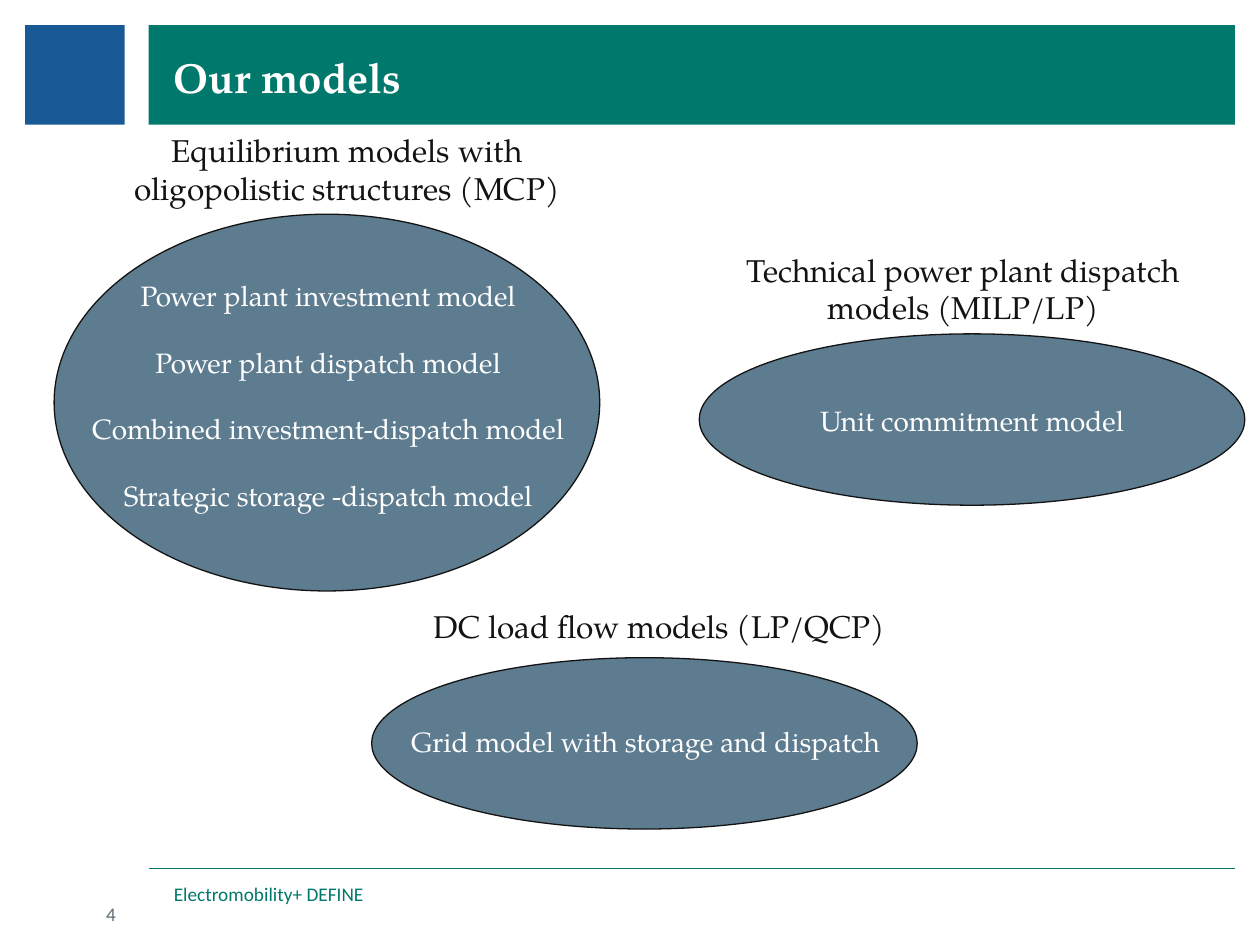
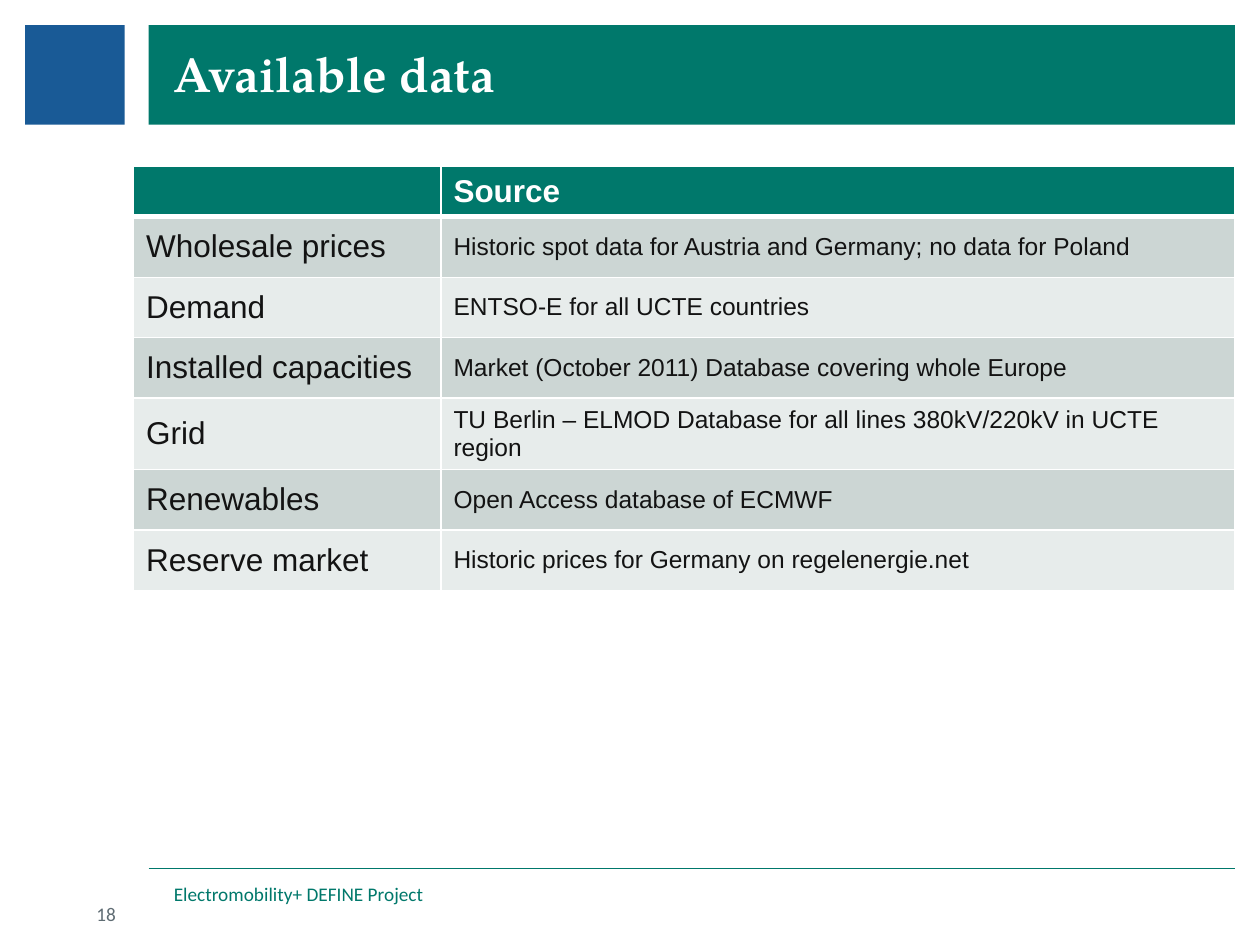
import pptx
import pptx.util
import pptx.dml.color
import pptx.enum.shapes
import pptx.enum.text
import pptx.oxml.ns
from lxml import etree

Inches = pptx.util.Inches
Pt = pptx.util.Pt
SHAPE = pptx.enum.shapes.MSO_SHAPE
ALIGN = pptx.enum.text.PP_ALIGN
ANCHOR = pptx.enum.text.MSO_ANCHOR
qn = pptx.oxml.ns.qn

COLORS = {
    "blue": "195A96", "green": "00786B", "slate": "5E7C8F", "ink": "131313",
    "gray": "5F6C73", "white": "FFFFFF", "odd_row": "CCD6D4", "even_row": "E7ECEB",
}
SERIF, SANS, FOOT = "TeX Gyre Pagella", "Arial", "Calibri"

FORMATS = {
    "title": dict(name=SERIF, bold=True, color="white"),
    "label": dict(name=SERIF, size=Pt(18), color="ink"),
    "model": dict(name=SERIF, size=Pt(16), color="white"),
    "number": dict(name=FOOT, size=Pt(11), color="gray"),
    "footer": dict(name=FOOT, size=Pt(11), color="green"),
    "header": dict(name=SANS, size=Pt(18), bold=True, color="white"),
    "topic": dict(name=SANS, size=Pt(18), bold=False, color="ink"),
    "source": dict(name=SANS, size=Pt(14), bold=False, color="ink"),
}

SLIDES = [
    dict(title="Our models", size=24, number="4", footer="Electromobility+ DEFINE"),
    dict(title="Available data", size=28, number="18", footer="Electromobility+ DEFINE Project"),
]

MODEL_GROUPS = [
    dict(label="Equilibrium models with oligopolistic structures (MCP)",
         label_box=(0.83, 0.99, 3.85, 0.71), ellipse=(0.43, 1.7, 4.33, 2.99),
         models_box=(0.28, 2.16, 4.65, 1.99),
         models=["Power plant investment model", "Power plant dispatch model",
                 "Combined investment-dispatch model", "Strategic storage -dispatch model"]),
    dict(label="Technical power plant dispatch models (MILP/LP)",
         label_box=(5.72, 1.94, 3.85, 0.71), ellipse=(5.55, 2.65, 4.33, 1.36),
         models_box=(5.39, 3.15, 4.65, 0.37), models=["Unit commitment model"]),
    dict(label="DC load flow models (LP/QCP)",
         label_box=(3.19, 4.77, 4.09, 0.4), ellipse=(2.95, 5.22, 4.33, 1.36),
         models_box=(2.8, 5.7, 4.65, 0.37), models=["Grid model with storage and dispatch"]),
]

DATA_SOURCES = [
    ("", "Source"),
    ("Wholesale prices", "Historic spot data for Austria and Germany; no data for Poland"),
    ("Demand", "ENTSO-E for all UCTE countries"),
    ("Installed capacities", "Market (October 2011) Database covering whole Europe"),
    ("Grid", "TU Berlin – ELMOD Database for all lines 380kV/220kV in UCTE region"),
    ("Renewables", "Open Access database of ECMWF"),
    ("Reserve market", "Historic prices for Germany on regelenergie.net"),
]
COLUMN_WIDTHS = (2.44, 6.3)
HEADER_HEIGHT, ROW_HEIGHT = 0.29, 0.48


def rgb(color):
    return pptx.dml.color.RGBColor.from_string(COLORS[color])


def box(values):
    return [Inches(v) for v in values]


def format_font(font, style, **extra):
    for key, value in {**FORMATS[style], **extra}.items():
        if key == "color":
            font.color.rgb = rgb(value)
        else:
            setattr(font, key, value)


def write(tf, lines, style, align=ALIGN.LEFT, gap=0, **extra):
    for i, line in enumerate(lines):
        p = tf.paragraphs[0] if i == 0 else tf.add_paragraph()
        p.alignment = align
        if i:
            p.space_before = Pt(gap)
        r = p.add_run()
        r.text = line
        format_font(r.font, style, **extra)


def clear_insets(tf):
    for side in ("left", "top", "right", "bottom"):
        setattr(tf, f"margin_{side}", 0)


def add_text(s, place, lines, style, align=ALIGN.LEFT, gap=0):
    tf = s.shapes.add_textbox(*box(place)).text_frame
    tf.word_wrap = True
    write(tf, lines, style, align, gap)
    return tf


def add_filled(s, kind, place, fill, line=None):
    sp = s.shapes.add_shape(kind, *box(place))
    sp.shadow.inherit = False
    sp.fill.solid()
    sp.fill.fore_color.rgb = rgb(fill)
    if line:
        sp.line.color.rgb = rgb(line)
        sp.line.width = Pt(0.75)
    else:
        sp.line.fill.background()
    return sp


def add_frame(s, layout):
    rule = s.shapes.add_connector(pptx.enum.shapes.MSO_CONNECTOR.STRAIGHT,
                                  *box((1.18, 6.89, 9.8, 6.89)))
    rule.line.color.rgb = rgb("green")
    rule.line.width = Pt(0.5)
    etree.SubElement(rule._element.spPr, qn("a:effectLst"))
    square = add_filled(s, SHAPE.RECTANGLE, (0.2, 0.2, 0.79, 0.79), "blue")
    band = add_filled(s, SHAPE.RECTANGLE, (1.18, 0.2, 8.62, 0.79), "green")
    for sp in (square, rule, band):
        layout.shapes._spTree.append(sp._element)


def add_heading(s, title, size, number, footer):
    sp = s.shapes.title
    sp.left, sp.top, sp.width, sp.height = box((1.38, 0.33, 8.17, 0.48))
    tf = sp.text_frame
    tf.auto_size = pptx.enum.text.MSO_AUTO_SIZE.NONE
    tf.vertical_anchor = ANCHOR.BOTTOM
    clear_insets(tf)
    write(tf, [title], "title", size=Pt(size))
    tf.paragraphs[0].space_after = Pt(2)
    tf = add_text(s, (0.17, 7.15, 0.75, 0.2), [number], "number", ALIGN.RIGHT)
    tf.vertical_anchor = ANCHOR.MIDDLE
    clear_insets(tf)
    clear_insets(add_text(s, (1.38, 7, 6.67, 0.17), [footer], "footer"))


def add_models(s):
    for group in MODEL_GROUPS:
        add_filled(s, SHAPE.OVAL, group["ellipse"], "slate", "ink")
        add_text(s, group["models_box"], group["models"], "model", ALIGN.CENTER, gap=19)
        add_text(s, group["label_box"], [group["label"]], "label", ALIGN.CENTER)


def set_borders(cell, is_header, below_header):
    tcPr = cell._tc.get_or_add_tcPr()
    for side in "LRTB":
        thick = (is_header and side == "B") or (below_header and side == "T")
        ln = etree.SubElement(tcPr, qn(f"a:ln{side}"), w=str(Pt(3 if thick else 1)))
        fill = etree.SubElement(ln, qn("a:solidFill"))
        etree.SubElement(fill, qn("a:srgbClr"), val=COLORS["white"])


def add_sources(s):
    heights = [HEADER_HEIGHT] + [ROW_HEIGHT] * (len(DATA_SOURCES) - 1)
    place = (1.06, 1.32, sum(COLUMN_WIDTHS), sum(heights))
    table = s.shapes.add_table(len(heights), len(COLUMN_WIDTHS), *box(place)).table
    for column, width in zip(table.columns, COLUMN_WIDTHS):
        column.width = Inches(width)
    for i, (row, height) in enumerate(zip(table.rows, heights)):
        row.height = Inches(height)
        fill = "green" if i == 0 else "odd_row" if i % 2 else "even_row"
        styles = ("header", "header") if i == 0 else ("topic", "source")
        for cell, text, style in zip(row.cells, DATA_SOURCES[i], styles):
            set_borders(cell, i == 0, i == 1)
            cell.fill.solid()
            cell.fill.fore_color.rgb = rgb(fill)
            cell.vertical_anchor = ANCHOR.MIDDLE
            if text:
                write(cell.text_frame, [text], style)


def main():
    prs = pptx.Presentation()
    prs.slide_width, prs.slide_height = Inches(10), Inches(7.5)
    layout = prs.slide_layouts[5]
    slides = [prs.slides.add_slide(layout) for _ in SLIDES]
    add_frame(slides[0], layout)
    for s, heading, add_content in zip(slides, SLIDES, (add_models, add_sources)):
        add_heading(s, **heading)
        add_content(s)
    prs.save("out.pptx")


if __name__ == "__main__":
    main()
